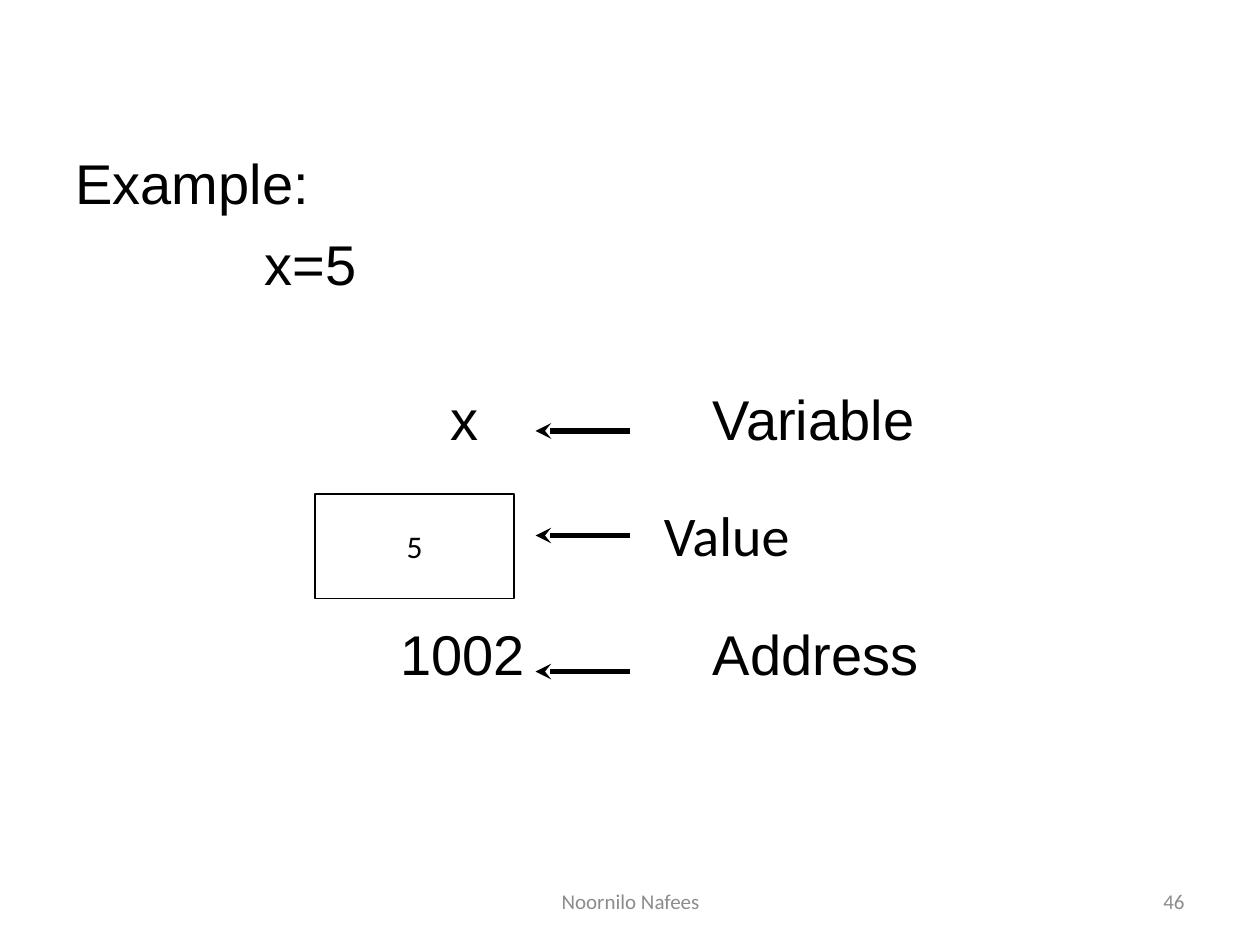
from dataclasses import dataclass

from lxml import etree
from pptx import Presentation
from pptx.dml.color import RGBColor
from pptx.enum import shapes, text
from pptx.oxml.ns import qn
from pptx.util import Inches, Pt


@dataclass(frozen=True)
class Theme:
    ink: RGBColor = RGBColor(0x00, 0x00, 0x00)
    muted: RGBColor = RGBColor(0x8C, 0x8C, 0x8C)
    body_font: str = "Arial"
    note_font: str = "Calibri"
    body: int = 32
    cell: int = 18
    footer: int = 12


THEME = Theme()


def style(p, font, size, color, align=text.PP_ALIGN.LEFT):
    p.alignment = align
    p.font.name, p.font.size = font, Pt(size)
    p.font.color.rgb = color


def add_text(s, box, lines, font=THEME.body_font, size=THEME.body,
             color=THEME.ink, align=text.PP_ALIGN.LEFT,
             anchor=text.MSO_ANCHOR.TOP):
    sp = s.shapes.add_textbox(*map(Inches, box))
    tf = sp.text_frame
    tf.word_wrap = True
    tf.vertical_anchor = anchor
    tf.text = "\n".join(lines)
    for p in tf.paragraphs:
        style(p, font, size, color, align)
    return tf


def add_arrow(s, left, y, width):
    """Arrow pointing left."""
    line = s.shapes.add_connector(
        shapes.MSO_CONNECTOR.STRAIGHT,
        Inches(left + width), Inches(y), Inches(left), Inches(y))
    line.line.color.rgb = THEME.ink
    line.line.width = Pt(3)
    etree.SubElement(line.line._get_or_add_ln(), qn("a:tailEnd"), type="stealth")
    etree.SubElement(line._element.spPr, qn("a:effectLst"))


def add_example(s, left, top, width, height):
    """Heading with the indented assignment below it."""
    tf = add_text(s, (left, top, width, height), ["Example:", "x=5"])
    assignment = tf.paragraphs[1]
    assignment.space_before = Pt(8)
    assignment._p.get_or_add_pPr().set("marL", str(Inches(1.5)))


def add_memory_cell(s, left, top, width, height):
    """Box holding the stored value."""
    sp = s.shapes.add_shape(shapes.MSO_SHAPE.RECTANGLE,
                            *map(Inches, (left, top, width, height)))
    sp.shadow.inherit = False
    sp.fill.background()
    sp.line.color.rgb = THEME.ink
    sp.line.width = Pt(0.75)
    tf = sp.text_frame
    tf.word_wrap = False
    tf.vertical_anchor = text.MSO_ANCHOR.MIDDLE
    tf.text = "5"
    style(tf.paragraphs[0], THEME.note_font, THEME.cell, THEME.ink,
          text.PP_ALIGN.CENTER)


def add_diagram(s, left, top):
    """Variable name, stored value and address, each with its label."""
    add_memory_cell(s, left, top + 0.92, 1.58, 0.83)

    # Name and address in Arial: x offset, y offset, width, wording
    for x, y, width, words in (
        (0.98, 0, 0.6, "x"), (3.06, 0, 2.2, "Variable"),
        (0.58, 1.87, 1.3, "1002"), (3.06, 1.87, 2.2, "Address"),
    ):
        add_text(s, (left + x, top + y, width, 0.63), [words])
    add_text(s, (left + 2.67, top + 0.92, 1.5, 0.63), ["Value"],
             font=THEME.note_font)

    for y in (0.42, 1.25, 2.33):
        add_arrow(s, left + 1.75, top + y, 0.75)


def add_footer(s, top, height):
    """Author in the centre, slide number on the right."""
    for left, width, words, align in (
        (3.42, 3.17, "Noornilo Nafees", text.PP_ALIGN.CENTER),
        (7.17, 2.33, "46", text.PP_ALIGN.RIGHT),
    ):
        add_text(s, (left, top, width, height), [words], THEME.note_font,
                 THEME.footer, THEME.muted, align, text.MSO_ANCHOR.MIDDLE)


def main():
    prs = Presentation()
    prs.slide_width, prs.slide_height = Inches(10), Inches(7.5)
    s = prs.slides.add_slide(prs.slide_layouts[6])
    add_example(s, 0.5, 1.13, 9, 1.3)
    add_diagram(s, 2.5, 3)
    add_footer(s, 6.95, 0.4)
    prs.save("out.pptx")


if __name__ == "__main__":
    main()
